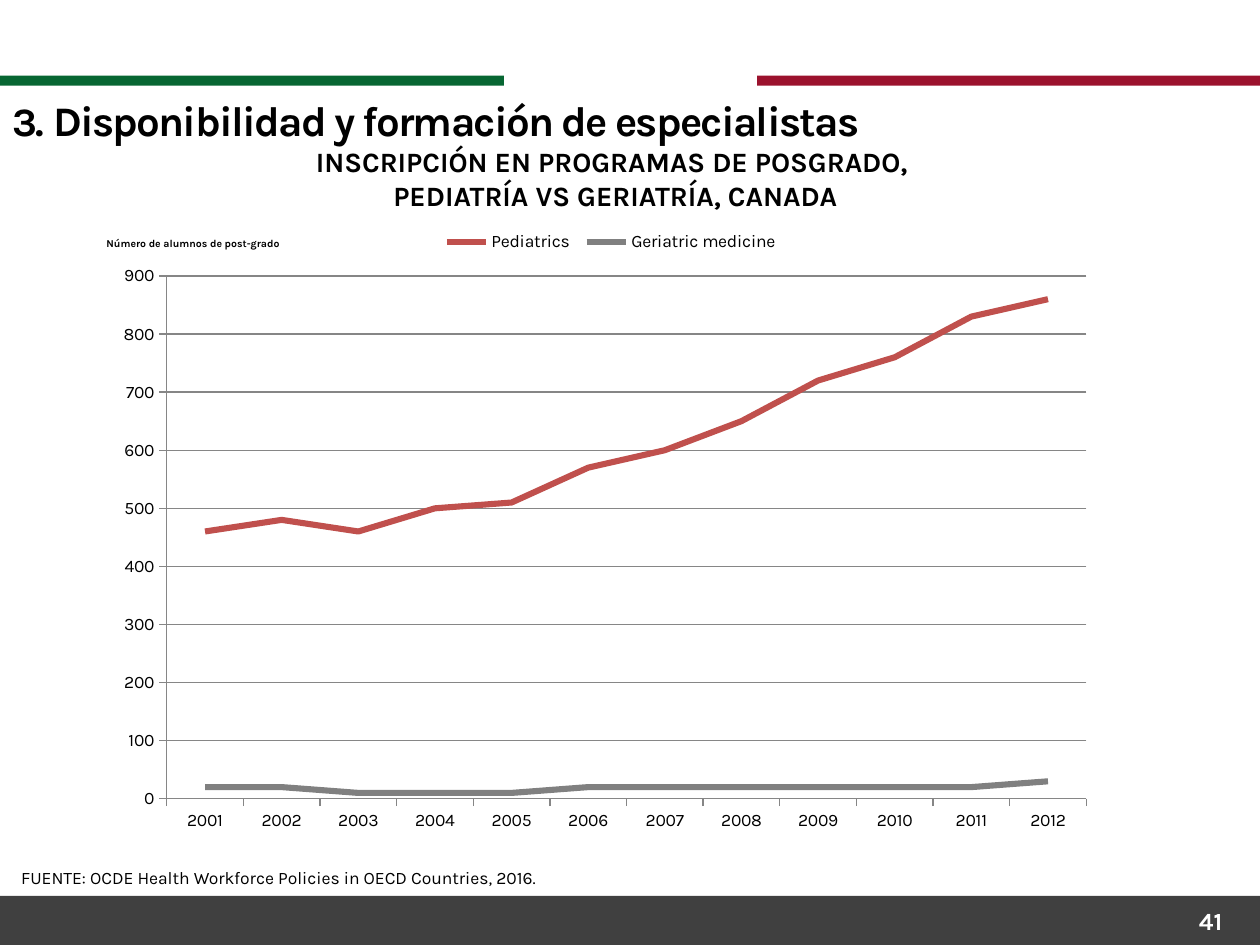
from dataclasses import dataclass

from lxml import etree
from pptx import Presentation
from pptx.chart.data import CategoryChartData
from pptx.dml.color import RGBColor
from pptx.enum.chart import XL_CHART_TYPE, XL_LEGEND_POSITION, XL_MARKER_STYLE, XL_TICK_MARK
from pptx.enum.shapes import MSO_SHAPE
from pptx.enum.text import MSO_ANCHOR, MSO_AUTO_SIZE, PP_ALIGN
from pptx.oxml.ns import qn
from pptx.util import Inches, Pt

LEFT, MID, RIGHT = PP_ALIGN.LEFT, PP_ALIGN.CENTER, PP_ALIGN.RIGHT
FONT = "Karla"
BLACK, WHITE, GREY = "000000", "FFFFFF", "868686"


@dataclass
class Box:
    x: float
    y: float
    w: float
    h: float

    def lengths(self) -> list:
        return [Inches(n) for n in (self.x, self.y, self.w, self.h)]


@dataclass
class Band:
    box: Box
    fill: str


@dataclass
class Run:
    text: str
    size: float
    bold: bool = False
    color: str = BLACK
    track: float = 0


@dataclass
class Line:
    name: str
    color: str
    vals: list


@dataclass
class Label:
    box: Box
    lines: list
    align: int = LEFT
    wrap: bool = True


BANDS = [
    Band(Box(0, 7.11, 10.02, 0.39), "404040"),
    Band(Box(0, 0.6, 4, 0.08), "076632"),
    Band(Box(6.01, 0.6, 4, 0.08), "9B122D"),
]
TITLE = Label(Box(0, 0.7, 10, 0.47), [[
    Run("3. ", 23, True, track=-1),
    Run("Disponibilidad y formación de especialistas", 24, True, track=-1),
]])
LABELS = [
    Label(Box(0.07, 6.83, 4.62, 0.44),
          [[Run("FUENTE: OCDE Health Workforce Policies in OECD Countries, 2016.", 10)]],
          wrap=False),
    Label(Box(0.2, 1.1, 9.37, 0.39),
          [[Run("INSCRIPCIÓN EN PROGRAMAS DE POSGRADO, ", 16, True)],
           [Run("PEDIATRÍA VS GERIATRÍA, CANADA", 16, True)]],
          MID, False),
    Label(Box(7.47, 7.14, 2.33, 0.4), [[Run("41", 14, True, WHITE)]], RIGHT),
]
YEARS = [str(year) for year in range(2001, 2013)]
SERIES = [
    Line("Pediatrics", "C0504D",
         [460, 480, 460, 500, 510, 570, 600, 650, 720, 760, 830, 860]),
    Line("Geriatric medicine", "808080",
         [20, 20, 10, 10, 10, 20, 20, 20, 20, 20, 20, 30]),
]


def rgb(code: str) -> RGBColor:
    return RGBColor.from_string(code)


def style(font, size: float, bold: bool = False, color: str = BLACK) -> None:
    font.name, font.size, font.bold = FONT, Pt(size), bold
    font.color.rgb = rgb(color)


def write(shape, label: Label) -> None:
    frame = shape.text_frame
    frame.word_wrap = label.wrap
    frame.auto_size = MSO_AUTO_SIZE.NONE
    frame.vertical_anchor = MSO_ANCHOR.TOP
    for i, runs in enumerate(label.lines):
        para = frame.add_paragraph() if i else frame.paragraphs[0]
        para.alignment = label.align
        for run in runs:
            part = para.add_run()
            part.text = run.text
            style(part.font, run.size, run.bold, run.color)
            if run.track:
                part.font._element.set("spc", str(int(run.track * 100)))


def draw_band(slide, band: Band) -> None:
    shape = slide.shapes.add_shape(MSO_SHAPE.RECTANGLE, *band.box.lengths())
    shape.shadow.inherit = False
    shape.fill.solid()
    shape.fill.fore_color.rgb = rgb(band.fill)
    shape.line.fill.background()


def place(part, index: int, inner: bool = False, **spots: float) -> None:
    """Give a chart part a fixed place, in fractions of the chart."""
    for old in part.findall(qn("c:layout")):
        part.remove(old)
    layout = etree.Element(qn("c:layout"))
    manual = etree.SubElement(layout, qn("c:manualLayout"))
    items = [("layoutTarget", "inner")] if inner else []
    items += [("xMode", "edge"), ("yMode", "edge"), *spots.items()]
    for tag, val in items:
        etree.SubElement(manual, qn("c:" + tag)).set("val", str(val))
    part.insert(index, layout)


def draw_chart(slide, box: Box) -> None:
    data = CategoryChartData()
    data.categories = YEARS
    for line in SERIES:
        data.add_series(line.name, line.vals)
    chart = slide.shapes.add_chart(XL_CHART_TYPE.LINE, *box.lengths(), data).chart
    style(chart.font, 10)

    # Lines
    plot = chart.plots[0]
    plot.vary_by_categories = False
    for item, line in zip(plot.series, SERIES):
        item.smooth = False
        item.marker.style = XL_MARKER_STYLE.NONE
        item.format.line.color.rgb = rgb(line.color)
        item.format.line.width = Pt(3.5)

    # Axes
    scale = chart.value_axis
    scale.minimum_scale, scale.maximum_scale, scale.major_unit = 0, 900, 100
    scale.has_major_gridlines = True
    for axis in (chart.category_axis, scale):
        axis.major_tick_mark = XL_TICK_MARK.OUTSIDE
        axis.minor_tick_mark = XL_TICK_MARK.NONE
        style(axis.tick_labels.font, 10)
    for edge in (chart.category_axis, scale, scale.major_gridlines):
        edge.format.line.color.rgb = rgb(GREY)
        edge.format.line.width = Pt(0.75)

    # Title and legend
    chart.has_title = True
    head = chart.chart_title
    head.include_in_layout = False
    run = head.text_frame.paragraphs[0].add_run()
    run.text = "Número de alumnos de post-grado"
    style(run.font, 6, True)
    chart.has_legend = True
    key = chart.legend
    key.position = XL_LEGEND_POSITION.TOP
    key.include_in_layout = False
    style(key.font, 10)

    place(head._element, 1, x=0, y=0.09)
    place(key._element, 1, x=0.33, y=0.07, w=0.35, h=0.06)
    place(chart._chartSpace.chart.plotArea, 0, True, x=0.062, y=0.151, w=0.917, h=0.783)


def main() -> None:
    deck = Presentation()
    deck.slide_width, deck.slide_height = Inches(10), Inches(7.5)
    slide = deck.slides.add_slide(deck.slide_layouts[5])

    # Bands at the top and the foot
    for band in BANDS:
        draw_band(slide, band)

    # Title
    title = slide.shapes.title
    title.left, title.top, title.width, title.height = TITLE.box.lengths()
    write(title, TITLE)

    # Source, subtitle and page number
    for label in LABELS:
        write(slide.shapes.add_textbox(*label.box.lengths()), label)

    draw_chart(slide, Box(0.83, 1.39, 7.96, 5.3))
    deck.save("out.pptx")


if __name__ == "__main__":
    main()
